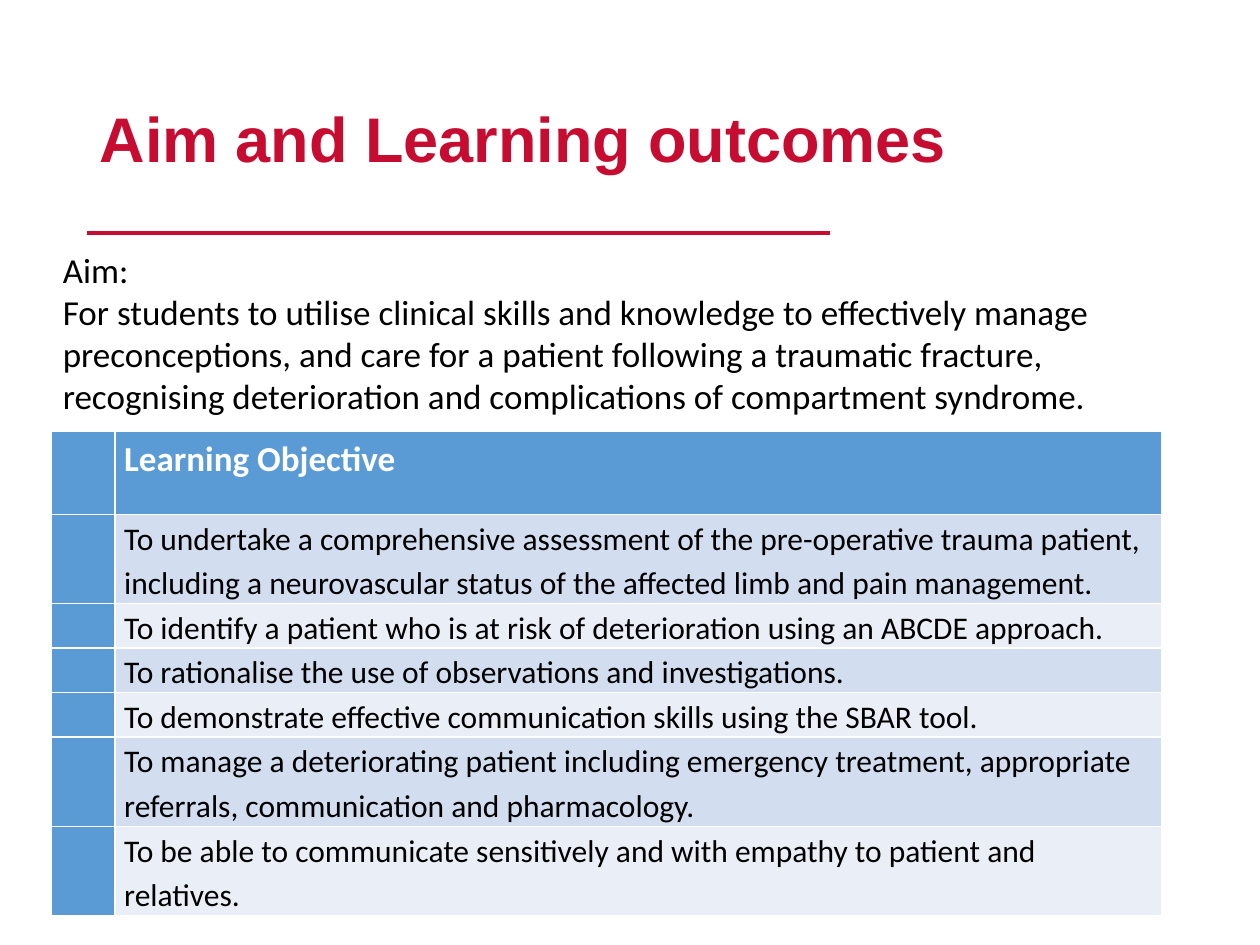
"""Build the aim and learning outcomes slide."""
from lxml import etree
from pptx import Presentation
from pptx.dml.color import RGBColor
from pptx.enum.shapes import MSO_CONNECTOR
from pptx.enum.text import MSO_ANCHOR, MSO_AUTO_SIZE, PP_ALIGN
from pptx.oxml.ns import qn
from pptx.util import Pt

STRAIGHT = MSO_CONNECTOR.STRAIGHT
TOP, MIDDLE = MSO_ANCHOR.TOP, MSO_ANCHOR.MIDDLE
GROW = MSO_AUTO_SIZE.SHAPE_TO_FIT_TEXT
LEFT = PP_ALIGN.LEFT
RED, BLUE, BLACK, WHITE = "C60C30", "5B9BD5", "000000", "FFFFFF"
BANDS = ["D2DEEF", "EAEFF7"]

AIM = [
    "Aim:",
    "For students to utilise clinical skills and knowledge to effectively manage preconceptions, "
    "and care for a patient following a traumatic fracture, recognising deterioration and "
    "complications of compartment syndrome.",
]
OBJECTIVES = [
    ("Learning Objective", 47.5),
    ("To undertake a comprehensive assessment of the pre-operative trauma patient, including a "
     "neurovascular status of the affected limb and pain management.", 51),
    ("To identify a patient who is at risk of deterioration using an ABCDE approach.", 25.4),
    ("To rationalise the use of observations and investigations.", 25.4),
    ("To demonstrate effective communication skills using the SBAR tool.", 25.4),
    ("To manage a deteriorating patient including emergency treatment, appropriate referrals, "
     "communication and pharmacology.", 51),
    ("To be able to communicate sensitively and with empathy to patient and relatives.", 51),
]


def color(value):
    return RGBColor.from_string(value)


def write(para, text, hue, **formats):
    span = para.add_run()
    span.text = text
    span.font.color.rgb = color(hue)
    for name, value in formats.items():
        setattr(span.font, name, value)


deck = Presentation()
deck.slide_width, deck.slide_height = Pt(720), Pt(540)
page = deck.slides.add_slide(deck.slide_layouts[5])

rule = page.shapes.add_connector(STRAIGHT, Pt(49.7), Pt(133.2), Pt(474.5), Pt(133.2))
rule.line.color.rgb = color(RED)
rule.line.width = Pt(2.25)
etree.SubElement(rule._element.spPr, qn("a:effectLst"))

title = page.shapes.title
title.left, title.top, title.width, title.height = Pt(49.7), Pt(28.8), Pt(522.7), Pt(104.4)
title.text_frame.vertical_anchor = MIDDLE
heading = title.text_frame.paragraphs[0]
heading.alignment = LEFT
heading.line_spacing = 0.9
write(heading, "Aim and Learning outcomes", RED, name="Arial", size=Pt(36), bold=True)

aim_box = page.shapes.add_textbox(Pt(28.8), Pt(138.2), Pt(634.3), Pt(147.6))
aim_frame = aim_box.text_frame
aim_frame.word_wrap = True
aim_frame.auto_size = GROW
for index, text in enumerate(AIM):
    para = aim_frame.add_paragraph() if index else aim_frame.paragraphs[0]
    write(para, text, BLACK, name="Calibri", size=Pt(20))

table_height = sum(height for text, height in OBJECTIVES)
table = page.shapes.add_table(
    len(OBJECTIVES), 2, Pt(29.3), Pt(246.5), Pt(634.3), Pt(table_height)).table
table.first_col = True
table.columns[0].width, table.columns[1].width = Pt(36.5), Pt(597.8)
for index, (text, height) in enumerate(OBJECTIVES):
    table.rows[index].height = Pt(height)
    fills = [BLUE, BANDS[(index - 1) % 2] if index else BLUE]
    for column, fill in enumerate(fills):
        cell = table.cell(index, column)
        cell.fill.solid()
        cell.fill.fore_color.rgb = color(fill)
        cell.vertical_anchor = TOP
        cell.margin_top = cell.margin_bottom = Pt(0)
        cell.margin_left = cell.margin_right = Pt(5.2)
    para = table.cell(index, 1).text_frame.paragraphs[0]
    para.line_spacing = 1.15
    write(para, text, BLACK if index else WHITE, name="Calibri",
          size=Pt(18 if index else 20), bold=index == 0)

deck.save("out.pptx")
